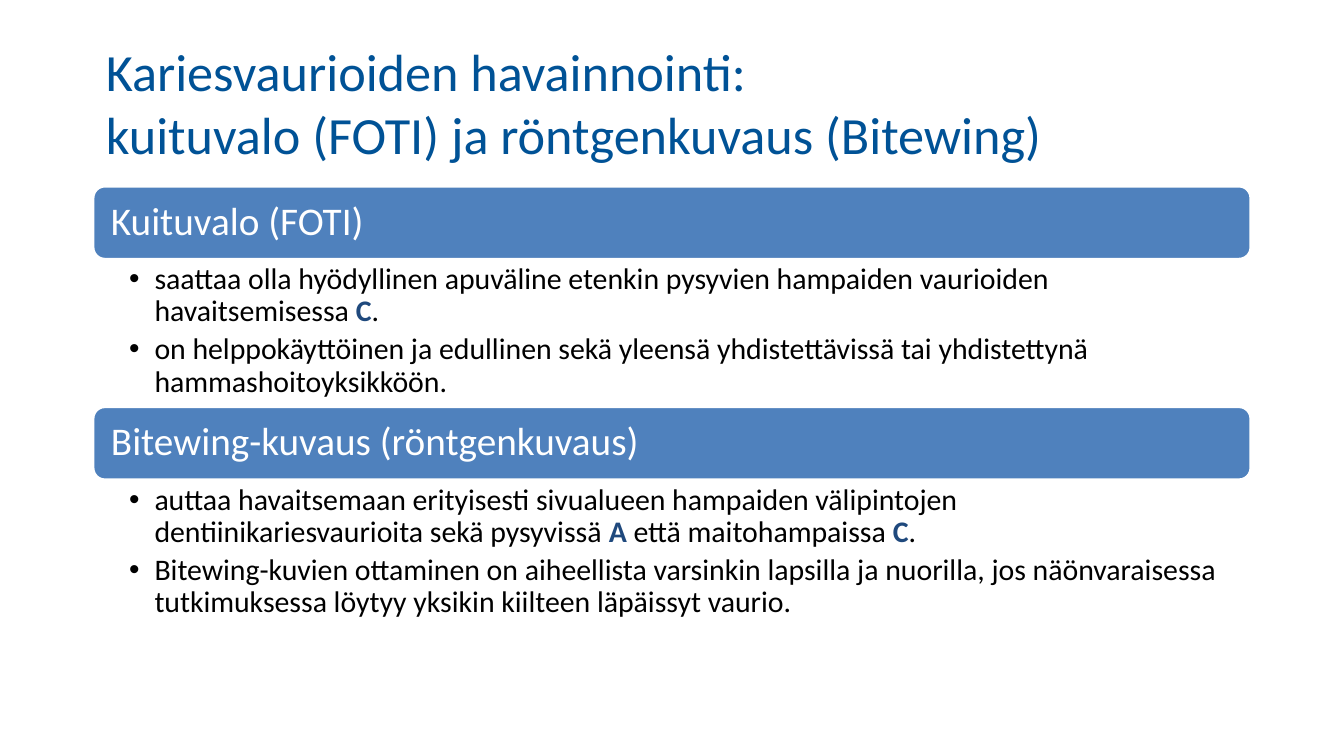
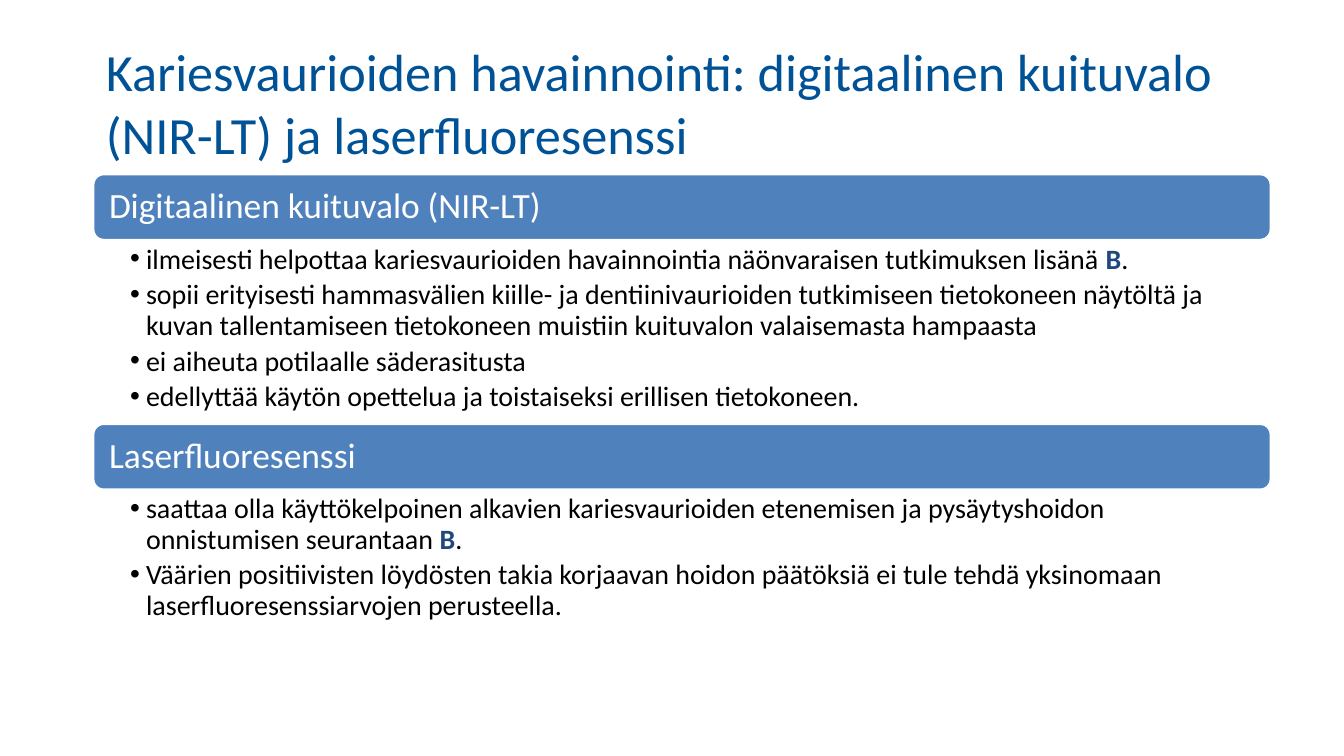
from lxml import etree
from pptx import Presentation
from pptx import util as u
from pptx.dml.color import RGBColor
from pptx.enum import shapes, text
from pptx.oxml.ns import qn

FONT = "Calibri"
TITLE, BAR, GRADE, WHITE, BLACK = "005296", "4F81BD", "1F497D", "FFFFFF", "000000"
LEFT = 1.75

# Lengths in cm, text sizes in points; *X* marks a grade of evidence.
SLIDES = [
    {
        "title": ("Kariesvaurioiden havainnointi: ",
                  "kuituvalo (FOTI) ja röntgenkuvaus (Bitewing)"),
        "top": 3.51, "width": 21.9, "bar": 1.4, "pad": 0.28, "head": 21,
        "size": 16, "indent": 0.48, "sides": (0.69, 0.41),
        "parts": [
            ("Kuituvalo (FOTI)", 2.77, [
                "saattaa olla hyödyllinen apuväline etenkin pysyvien hampaiden "
                "vaurioiden havaitsemisessa *C*.",
                "on helppokäyttöinen ja edullinen sekä yleensä yhdistettävissä "
                "tai yhdistettynä hammashoitoyksikköön.",
            ]),
            ("Bitewing-kuvaus (röntgenkuvaus)", 2.77, [
                "auttaa havaitsemaan erityisesti sivualueen hampaiden välipintojen "
                "dentiinikariesvaurioita sekä pysyvissä *A* että maitohampaissa *C*.",
                "Bitewing-kuvien ottaminen on aiheellista varsinkin lapsilla ja "
                "nuorilla, jos näönvaraisessa tutkimuksessa löytyy yksikin "
                "kiilteen läpäissyt vaurio.",
            ]),
        ],
    },
    {
        "title": ("Kariesvaurioiden havainnointi: digitaalinen kuituvalo ",
                  "(NIR-LT) ja laserfluoresenssi"),
        "top": 3.28, "width": 22.28, "bar": 1.27, "pad": 0.25, "head": 19,
        "size": 15, "indent": 0.3, "sides": (0.71, 0.38),
        "parts": [
            ("Digitaalinen kuituvalo (NIR-LT)", 3.45, [
                "ilmeisesti helpottaa kariesvaurioiden havainnointia "
                "näönvaraisen tutkimuksen lisänä *B*.",
                "sopii erityisesti hammasvälien kiille- ja dentiinivaurioiden "
                "tutkimiseen tietokoneen näytöltä ja kuvan tallentamiseen "
                "tietokoneen muistiin kuituvalon valaisemasta hampaasta",
                "ei aiheuta potilaalle säderasitusta",
                "edellyttää käytön opettelua ja toistaiseksi erillisen tietokoneen.",
            ]),
            ("Laserfluoresenssi", 2.62, [
                "saattaa olla käyttökelpoinen alkavien kariesvaurioiden etenemisen "
                "ja pysäytyshoidon onnistumisen seurantaan *B*.",
                "Väärien positiivisten löydösten takia korjaavan hoidon päätöksiä "
                "ei tule tehdä yksinomaan laserfluoresenssiarvojen perusteella.",
            ]),
        ],
    },
]


def color(code):
    return RGBColor.from_string(code)


def style(run, size, code, bold=False):
    run.font.name, run.font.size, run.font.bold = FONT, u.Pt(size), bold
    run.font.color.rgb = color(code)


def place(shape, *box):
    shape.left, shape.top, shape.width, shape.height = map(u.Cm, box)


def frame(shape, anchor, left, top, right, low):
    """Set wrapping, anchor and insets, and return the text frame."""
    tf = shape.text_frame
    tf.word_wrap, tf.auto_size = True, text.MSO_AUTO_SIZE.NONE
    tf.vertical_anchor = anchor
    tf.margin_left, tf.margin_top = u.Cm(left), u.Cm(top)
    tf.margin_right, tf.margin_bottom = u.Cm(right), u.Cm(low)
    return tf


def add_title(slide, lines):
    shape = slide.shapes.title
    place(shape, LEFT, 0.61, 22.5, 2.64)
    tf = frame(shape, text.MSO_ANCHOR.TOP, 0.25, 0.13, 0.25, 0.13)
    tf.text = "\v".join(lines)
    para = tf.paragraphs[0]
    para.alignment = text.PP_ALIGN.LEFT
    for run in para.runs:
        style(run, 28, TITLE)


def add_bar(slide, label, top, look):
    bar = slide.shapes.add_shape(
        shapes.MSO_SHAPE.ROUNDED_RECTANGLE, 0, 0, 0, 0)
    place(bar, LEFT, top, look["width"], look["bar"])
    bar.shadow.inherit = False
    bar.fill.solid()
    bar.fill.fore_color.rgb = color(BAR)
    bar.line.color.rgb = color(WHITE)
    bar.line.width = u.Pt(2)
    tf = frame(bar, text.MSO_ANCHOR.MIDDLE, *[look["pad"]] * 4)
    tf.text = label
    para = tf.paragraphs[0]
    para.alignment, para.line_spacing = text.PP_ALIGN.LEFT, 0.9
    style(para.runs[0], look["head"], WHITE)


def add_list(shape, items, top, height, look):
    place(shape, LEFT, top, look["width"], height)
    left, right = look["sides"]
    tf = frame(shape, text.MSO_ANCHOR.TOP, left, 0.08, right, 0.08)
    tf.text = "\n".join(item.replace("*", "") for item in items)
    for para, item in zip(tf.paragraphs, items):
        para.clear()
        para.level, para.line_spacing = 1, 0.9
        para.space_before, para.space_after = u.Pt(0), u.Pt(3)
        props = para._p.get_or_add_pPr()
        props.set("marL", str(u.Cm(look["indent"])))
        props.set("indent", str(-u.Cm(look["indent"])))
        etree.SubElement(props, qn("a:buChar"), char="•")
        for n, part in enumerate(item.split("*")):
            run = para.add_run()
            run.text = part
            grade = n % 2 == 1
            style(run, look["size"], GRADE if grade else BLACK, grade)


def main():
    prs = Presentation()
    prs.slide_width, prs.slide_height = u.Cm(25.4), u.Cm(14.29)
    for look in SLIDES:
        slide = prs.slides.add_slide(prs.slide_layouts.get_by_name("Two Content"))
        add_title(slide, look["title"])
        top = look["top"]
        for n, (label, height, items) in enumerate(look["parts"], 1):
            add_bar(slide, label, top, look)
            top += look["bar"]
            add_list(slide.placeholders[n], items, top, height, look)
            top += height
    prs.save("out.pptx")


if __name__ == "__main__":
    main()
